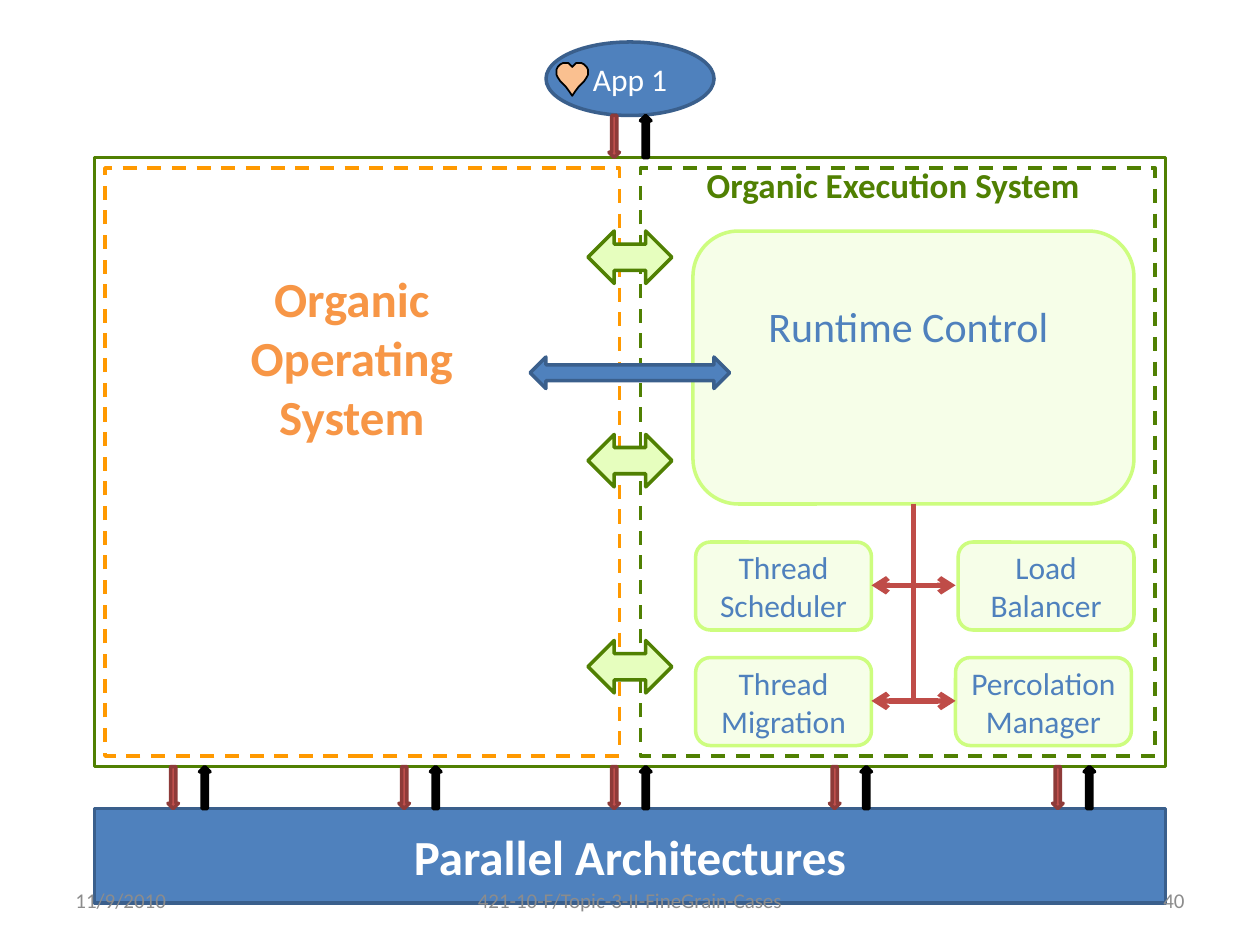
from dataclasses import dataclass

from lxml.etree import SubElement
from pptx import Presentation
from pptx.dml.color import RGBColor
from pptx.enum.dml import MSO_LINE
from pptx.enum.shapes import MSO_CONNECTOR, MSO_SHAPE
from pptx.enum.text import MSO_ANCHOR, PP_ALIGN
from pptx.oxml.ns import qn
from pptx.util import Pt

PX = 9525  # EMU per px, 96 px to the inch


@dataclass(frozen=True)
class Theme:
    font: str = "Calibri"
    white: str = "FFFFFF"
    black: str = "000000"
    blue: str = "4F81BD"
    blue_edge: str = "3A5F8C"
    red: str = "C0504D"
    red_edge: str = "8E3B39"
    red_line: str = "BF4C48"
    green: str = "508002"
    lime: str = "E6FEBE"
    pale: str = "F6FEE8"
    pale_edge: str = "CDFD7F"
    orange: str = "F79646"
    orange_edge: str = "FF9900"
    peach: str = "FAC090"
    grey: str = "8C8C8C"
    heading: int = 28
    control: int = 24
    panel: int = 20
    label: int = 18
    footer: int = 12


THEME = Theme()


def emu(*lengths):
    return [length * PX for length in lengths]


def paint(shape, fill, edge, width=2):
    shape.shadow.inherit = False
    shape.fill.solid()
    shape.fill.fore_color.rgb = RGBColor.from_string(fill)
    shape.line.color.rgb = RGBColor.from_string(edge)
    shape.line.width = Pt(width)


def write(shape, text, size, color, bold=False, align=PP_ALIGN.CENTER,
          anchor=MSO_ANCHOR.MIDDLE):
    frame = shape.text_frame
    frame.word_wrap = True
    frame.vertical_anchor = anchor
    frame.text = text
    for para in frame.paragraphs:
        para.alignment = align
        para.font.name = THEME.font
        para.font.size = Pt(size)
        para.font.bold = bold
        para.font.color.rgb = RGBColor.from_string(color)


def add_block(page, kind, area, fill, edge, dash=False):
    block = page.shapes.add_shape(kind, *emu(*area))
    paint(block, fill, edge)
    if dash:
        block.line.dash_style = MSO_LINE.DASH
    return block


def add_text(page, area, text, size, color, **style):
    write(page.shapes.add_textbox(*emu(*area)), text, size, color, **style)


def add_module(page, left, top, text, side_inset=None):
    box = add_block(page, MSO_SHAPE.ROUNDED_RECTANGLE, (left, top, 134, 67),
                    THEME.pale, THEME.pale_edge)
    write(box, text, THEME.label, THEME.blue)
    if side_inset is not None:
        box.text_frame.margin_left = box.text_frame.margin_right = side_inset


def add_exchange(page, left, top):
    """A red arrow down beside a black arrow up."""
    add_block(page, MSO_SHAPE.DOWN_ARROW, (left, top, 8, 32), THEME.red, THEME.red_edge)
    add_block(page, MSO_SHAPE.UP_ARROW, (left + 24, top, 8, 32), THEME.black, THEME.black)


def add_heart(page, center, top):
    right = [(0, 3), (1, 2), (3, 0), (7, 0), (9, 1), (11, 3), (12, 5), (12, 9),
             (11, 11), (9, 14), (5, 18), (2, 22), (0, 25)]
    left = [(-x, y) for x, y in reversed(right[1:-1])]
    points = [(center + x, top + y) for x, y in right + left]
    builder = page.shapes.build_freeform(*points[0], scale=PX)
    builder.add_line_segments(points[1:], close=True)
    paint(builder.convert_to_shape(), THEME.peach, THEME.black, 1)


def add_branch(page, start, end):
    """A line that runs down from start, then turns sideways to an arrowhead at end."""
    (x1, y1), (x2, y2) = start, end
    # The one-bend connector runs sideways first, so its frame is turned a quarter.
    width, height = y2 - y1, abs(x2 - x1)
    left, top = (x1 + x2 - width) / 2, (y1 + y2 - height) / 2
    ends = [left, left + width]
    if x2 > x1:
        ends.reverse()
    corners = [int(n) for n in emu(ends[0], top, ends[1], top + height)]
    branch = page.shapes.add_connector(MSO_CONNECTOR.ELBOW, *corners)
    branch.line.color.rgb = RGBColor.from_string(THEME.red_line)
    branch.line.width = Pt(3)
    properties = branch.element.spPr
    properties.find(qn("a:prstGeom")).set("prst", "bentConnector2")
    quarter_turns = 3 if x2 > x1 else 1
    properties.find(qn("a:xfrm")).set("rot", str(quarter_turns * 90 * 60000))
    SubElement(properties.find(qn("a:ln")), qn("a:tailEnd"), type="arrow")
    SubElement(properties, qn("a:effectLst"))


def add_systems(page):
    add_block(page, MSO_SHAPE.RECTANGLE, (72, 120, 816, 464), THEME.white, THEME.green)
    for left, edge in ((488, THEME.green), (80, THEME.orange_edge)):
        add_block(page, MSO_SHAPE.RECTANGLE, (left, 128, 392, 448),
                  THEME.white, edge, dash=True)
    add_text(page, (144, 200, 248, 145), "Organic Operating System", THEME.heading,
             THEME.orange, bold=True, anchor=MSO_ANCHOR.TOP)
    add_text(page, (529, 120, 312, 41), "Organic Execution System", THEME.panel,
             THEME.green, bold=True, align=PP_ALIGN.LEFT, anchor=MSO_ANCHOR.TOP)


def add_runtime(page):
    add_module(page, 530, 413, "Thread\vScheduler")
    add_module(page, 530, 501, "Thread\vMigration")
    add_module(page, 730, 413, "Load Balancer")
    add_module(page, 728, 501, "Percolation Manager", side_inset=0)
    add_block(page, MSO_SHAPE.ROUNDED_RECTANGLE, (528, 176, 336, 208),
              THEME.pale, THEME.pale_edge)
    for row in (446, 534):
        for side in (664, 728):
            add_branch(page, (696, 384), (side, row))
    add_text(page, (576, 224, 240, 48), "Runtime Control", THEME.control, THEME.blue,
             align=PP_ALIGN.LEFT, anchor=MSO_ANCHOR.TOP)


def add_outer_layers(page):
    app = add_block(page, MSO_SHAPE.OVAL, (416, 32, 128, 56), THEME.blue, THEME.blue_edge)
    write(app, "App 1", THEME.label, THEME.white)
    add_heart(page, 436, 48)
    hardware = add_block(page, MSO_SHAPE.RECTANGLE, (72, 616, 816, 72),
                         THEME.blue, THEME.blue_edge)
    write(hardware, "Parallel Architectures", THEME.heading, THEME.white, bold=True)
    add_exchange(page, 464, 88)
    for left in (128, 304, 464, 632, 802):
        add_exchange(page, left, 584)


def add_system_links(page):
    for top in (176, 331, 488):
        add_block(page, MSO_SHAPE.LEFT_RIGHT_ARROW, (448, top, 64, 40),
                  THEME.lime, THEME.green)
    add_block(page, MSO_SHAPE.LEFT_RIGHT_ARROW, (404, 272, 152, 24),
              THEME.blue, THEME.blue_edge)


def add_footer(page):
    for left, width, text, align in (
        (48, 224, "11/9/2010", PP_ALIGN.LEFT),
        (688, 224, "40", PP_ALIGN.RIGHT),
        (328, 304, "421-10-F/Topic-3-II-FineGrain-Cases", PP_ALIGN.CENTER),
    ):
        add_text(page, (left, 667, width, 38), text, THEME.footer, THEME.grey, align=align)


def main():
    deck = Presentation()
    deck.slide_width, deck.slide_height = emu(960, 720)
    page = deck.slides.add_slide(deck.slide_layouts.get_by_name("Blank"))
    add_systems(page)
    add_outer_layers(page)
    add_runtime(page)
    add_system_links(page)
    add_footer(page)
    deck.save("out.pptx")


if __name__ == "__main__":
    main()
